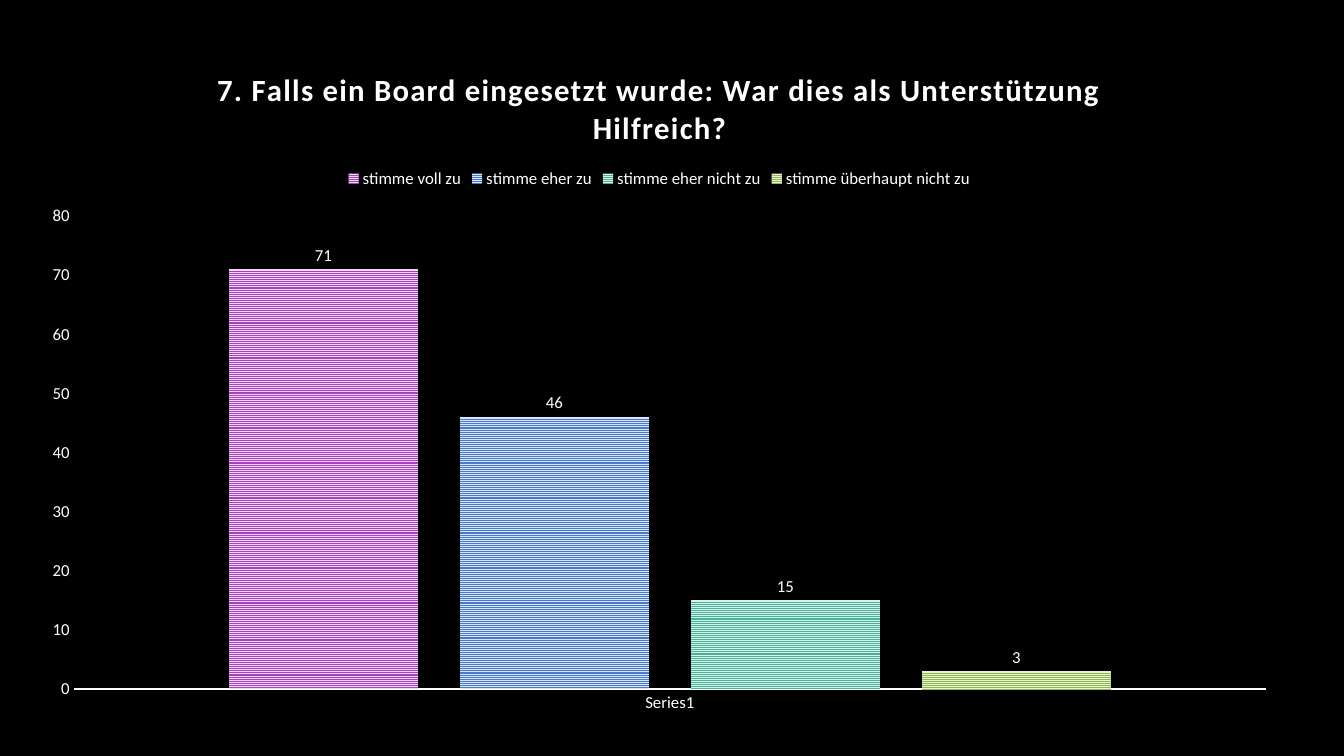
from pptx import Presentation
from pptx.chart.data import CategoryChartData
from pptx.dml.color import RGBColor
from pptx.enum.chart import XL_CHART_TYPE, XL_LABEL_POSITION, XL_LEGEND_POSITION, XL_TICK_MARK
from pptx.enum.dml import MSO_PATTERN
from pptx.util import Pt

CLUSTERED = XL_CHART_TYPE.COLUMN_CLUSTERED
OUTSIDE_END = XL_LABEL_POSITION.OUTSIDE_END
LEGEND_TOP = XL_LEGEND_POSITION.TOP
NO_TICK = XL_TICK_MARK.NONE
STRIPES = MSO_PATTERN.NARROW_HORIZONTAL

FONT = "Calibri"
WHITE = "FFFFFF"
BLACK = "000000"
QUESTION = "7. Falls ein Board eingesetzt wurde: War dies als Unterstützung Hilfreich?"

# Answer, votes, stripe colour, background colour
ANSWERS = [
    ("stimme voll zu", 71, "AC3EC1", "EED8F3"),
    ("stimme eher zu", 46, "477BD1", "DAE5F6"),
    ("stimme eher nicht zu", 15, "46B298", "D9F0EB"),
    ("stimme überhaupt nicht zu", 3, "90BA4C", "E9F1DB"),
]


def rgb(value):
    return RGBColor.from_string(value)


def format_font(font, size=12, color=WHITE, bold=False):
    font.name = FONT
    font.size = Pt(size)
    font.bold = bold
    font.color.rgb = rgb(color)


def add_text(tf, text, spacing=0, **fmt):
    r = tf.paragraphs[0].add_run()
    r.text = text
    format_font(r.font, **fmt)
    r._r.get_or_add_rPr().set("spc", str(spacing * 100))


def add_answer_chart(s, left, top, width, height):
    data = CategoryChartData()
    data.categories = ["Series1"]
    for name, votes, *_ in ANSWERS:
        data.add_series(name, [votes])
    frame = s.shapes.add_chart(CLUSTERED, Pt(left), Pt(top), Pt(width), Pt(height), data)
    chart = frame.chart
    format_font(chart.font, size=10)
    return chart


def format_title(chart):
    chart.has_title = True
    chart.chart_title.include_in_layout = False
    add_text(chart.chart_title.text_frame, QUESTION, size=22, bold=True, spacing=1)


def format_legend(chart):
    chart.has_legend = True
    chart.legend.position = LEGEND_TOP
    chart.legend.include_in_layout = False
    format_font(chart.legend.font)


def format_axes(chart):
    for axis in (chart.category_axis, chart.value_axis):
        axis.has_major_gridlines = False
        axis.major_tick_mark = NO_TICK
        axis.minor_tick_mark = NO_TICK
        format_font(axis.tick_labels.font)
    line = chart.category_axis.format.line
    line.color.rgb = rgb(WHITE)
    line.width = Pt(1.5)
    value_axis = chart.value_axis
    value_axis.format.line.fill.background()
    value_axis.minimum_scale = 0
    value_axis.maximum_scale = 80
    value_axis.major_unit = 10


def format_columns(chart):
    plot = chart.plots[0]
    plot.vary_by_categories = False
    plot.gap_width = 164
    plot.overlap = -22
    for series, (_, _, stripe, back) in zip(plot.series, ANSWERS):
        fill = series.format.fill
        fill.patterned()
        fill.pattern = STRIPES
        fill.fore_color.rgb = rgb(stripe)
        fill.back_color.rgb = rgb(back)
        labels = series.data_labels
        labels.show_value = True
        labels.position = OUTSIDE_END
        format_font(labels.font)


def main():
    prs = Presentation()
    prs.slide_width = Pt(960)
    prs.slide_height = Pt(540)
    s = prs.slides.add_slide(prs.slide_layouts[6])

    # Background
    s.background.fill.solid()
    s.background.fill.fore_color.rgb = rgb(BLACK)

    # Survey chart
    chart = add_answer_chart(s, 19.5, 31.5, 903, 487.5)
    format_title(chart)
    format_legend(chart)
    format_axes(chart)
    format_columns(chart)

    prs.save("out.pptx")


if __name__ == "__main__":
    main()
